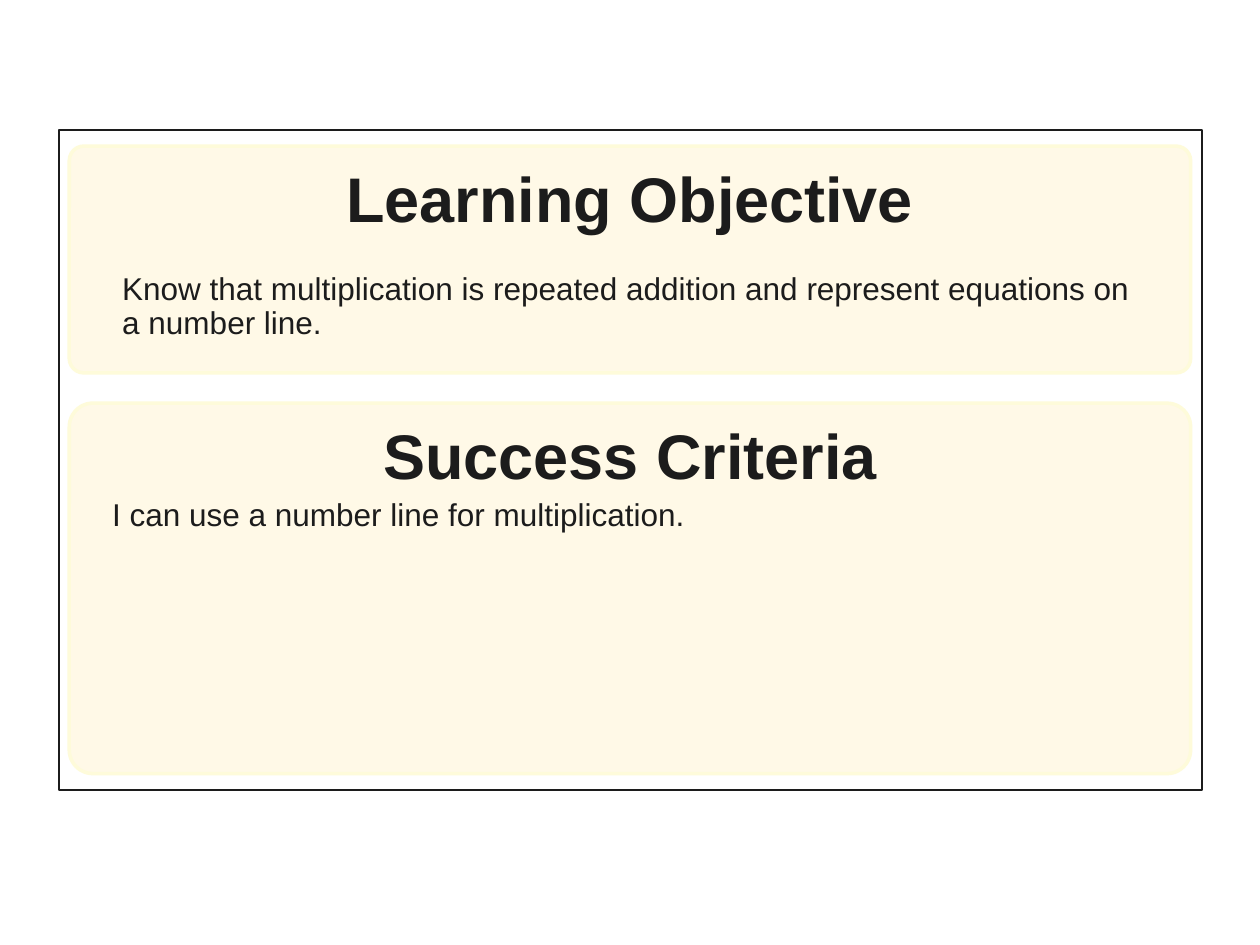
import dataclasses

import pptx
import pptx.dml.color
import pptx.enum.shapes
import pptx.enum.text
import pptx.util
from pptx.util import Inches


@dataclasses.dataclass(frozen=True)
class Theme:
    font: str = "Arial"
    ink: str = "1C1C1C"
    paper: str = "FFFFFF"
    panel: str = "FFF9E7"
    border: str = "FEFBDA"
    heading_size: int = 36
    body_size: int = 18
    line_spacing: float = 0.9


THEME = Theme()
SHAPES = pptx.enum.shapes.MSO_SHAPE
ALIGN = pptx.enum.text.PP_ALIGN
ANCHOR = pptx.enum.text.MSO_ANCHOR


def rgb(value):
    return pptx.dml.color.RGBColor.from_string(value)


def add_box(s, kind, box, fill, line, weight):
    sp = s.shapes.add_shape(kind, *map(Inches, box))
    sp.shadow.inherit = False
    sp.fill.solid()
    sp.fill.fore_color.rgb = rgb(fill)
    sp.line.color.rgb = rgb(line)
    sp.line.width = pptx.util.Pt(weight)
    return sp


def add_text(s, box, text, size, insets, bold=False, align=ALIGN.LEFT, anchor=ANCHOR.TOP):
    tf = s.shapes.add_textbox(*map(Inches, box)).text_frame
    tf.word_wrap = True
    tf.vertical_anchor = anchor
    tf.margin_left, tf.margin_top, tf.margin_right, tf.margin_bottom = map(Inches, insets)
    p = tf.paragraphs[0]
    p.text = text
    p.alignment = align
    p.line_spacing = THEME.line_spacing
    r = p.runs[0]
    r.font.name = THEME.font
    r.font.size = pptx.util.Pt(size)
    r.font.bold = bold
    r.font.color.rgb = rgb(THEME.ink)


def add_panel(s, box, heading, body, body_offset, body_height, body_insets):
    left, top, width, height = box
    pad = 0.14
    text_left, text_width = left + pad, width - 2 * pad
    sp = add_box(s, SHAPES.ROUNDED_RECTANGLE, box, THEME.panel, THEME.border, 2)
    sp.adjustments[0] = 0.064
    add_text(s, (text_left, top + 0.15, text_width, 0.59), heading, THEME.heading_size,
             (0, 0, 0, 0), bold=True, align=ALIGN.CENTER, anchor=ANCHOR.MIDDLE)
    add_text(s, (text_left, top + body_offset, text_width, body_height), body,
             THEME.body_size, body_insets)


def main():
    prs = pptx.Presentation()
    prs.slide_width, prs.slide_height = Inches(10), Inches(7.5)
    s = prs.slides.add_slide(prs.slide_layouts[6])
    add_box(s, SHAPES.RECTANGLE, (0.47, 1.03, 9.07, 5.24), THEME.paper, THEME.ink, 1)
    add_panel(s, (0.55, 1.16, 8.9, 1.8), "Learning Objective",
              "Know that multiplication is repeated addition and represent equations "
              "on a number line.", 0.74, 0.88, (0.28, 0.28, 0.28, 0.28))
    add_panel(s, (0.55, 3.2, 8.9, 2.94), "Success Criteria",
              "I can use a number line for multiplication.",
              0.59, 2.87, (0.2, 0.28, 0.28, 0.2))
    prs.save("out.pptx")


if __name__ == "__main__":
    main()
